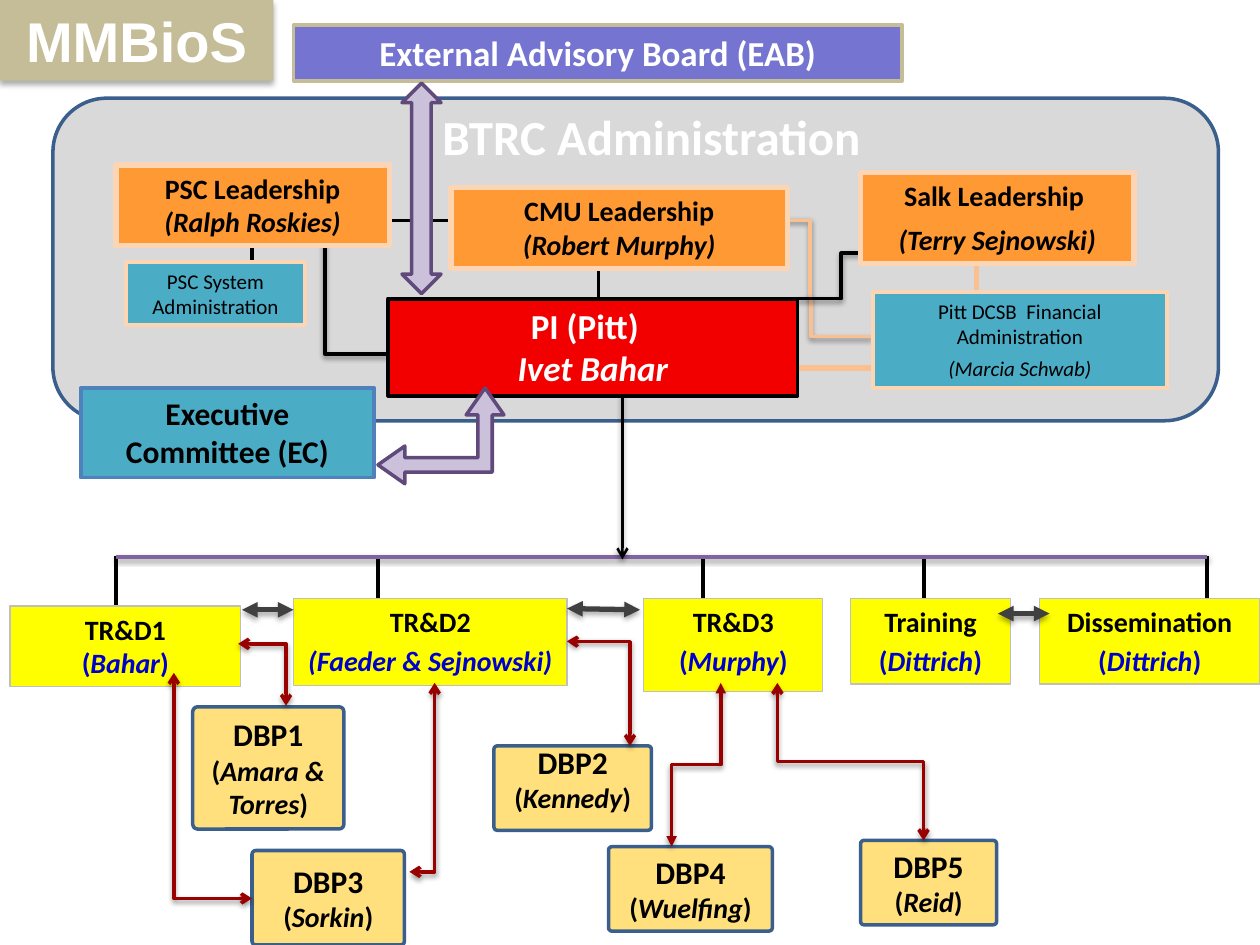
"""Build the organisation chart of the MMBioS centre."""
from lxml import etree
from pptx import Presentation
from pptx.dml.color import RGBColor
from pptx.enum import shapes, text
from pptx.oxml import ns
from pptx.util import Inches, Pt

BLACK, WHITE = RGBColor(0, 0, 0), RGBColor(255, 255, 255)
GREY, CHARCOAL = RGBColor(0xD9, 0xD9, 0xD9), RGBColor(0x40, 0x40, 0x40)
SILVER, NAVY = RGBColor(0xBF, 0xBF, 0xBF), RGBColor(0x3A, 0x5F, 0x8C)
ORANGE, PEACH = RGBColor(0xFF, 0x99, 0x33), RGBColor(0xFC, 0xD5, 0xB5)
APRICOT, TEAL = RGBColor(0xFA, 0xC0, 0x90), RGBColor(0x4B, 0xAC, 0xC6)
BLUE, INK_BLUE = RGBColor(0x4F, 0x81, 0xBD), RGBColor(0, 0, 0xCC)
LILAC, PLUM = RGBColor(0xCC, 0xC1, 0xDA), RGBColor(0x60, 0x4A, 0x7B)
PURPLE, VIOLET = RGBColor(0x80, 0x64, 0xA2), RGBColor(0x75, 0x75, 0xD1)
YELLOW, GOLD = RGBColor(0xFF, 0xFF, 0), RGBColor(0xFF, 0xE0, 0x7D)
RED, DARK_RED = RGBColor(0xF2, 0, 0), RGBColor(0x99, 0, 0)
TAN = RGBColor(0xC4, 0xBD, 0x97)

LINE_SHADOW, ARROW_SHADOW, BADGE_SHADOW = (38, 3.1, 1.6), (35, 3.1, 1.8), (32, 3.5, 2.2)

STYLES = {
    "badge": dict(fill=TAN, sizes=[32], color=WHITE, font="Arial", shadow=BADGE_SHADOW),
    "board": dict(fill=VIOLET, line=TAN, sizes=[20], color=WHITE, before=[6]),
    "pi": dict(fill=RED, line=BLACK, sizes=[20, 20], color=WHITE),
    "leader": dict(fill=ORANGE, line=PEACH, width=3, sizes=[16, 16]),
    "office": dict(fill=TEAL, line=PEACH, sizes=[12, 12], bold=False, before=[6, 4]),
    "committee": dict(fill=TEAL, line=BLUE, sizes=[18], before=[6], after=[6]),
    "core": dict(fill=YELLOW, line=SILVER, width=0.75, sizes=[16, 16],
                 name_color=INK_BLUE, upright=True),
    "project": dict(fill=GOLD, line=NAVY, width=2, sizes=[18, 16], upright=True,
                    rounded=True),
}

BOXES = [
    ("office", (1, 2.08, 1.42, 0.5), ["PSC System Administration"], {}),
    ("office", (6.93, 2.32, 2.33, 0.76),
     ["Pitt DCSB  Financial Administration", "(Marcia Schwab)"], {}),
    ("leader", (6.83, 1.37, 2.17, 0.72), ["Salk Leadership ", "(Terry Sejnowski)"],
     dict(before=[6, 6])),
    ("leader", (3.58, 1.49, 2.67, 0.64), ["CMU Leadership", "(Robert Murphy)"], {}),
    ("leader", (0.92, 1.31, 2.17, 0.64), ["PSC Leadership", "(Ralph Roskies)"], {}),
    ("committee", (0.64, 3.08, 2.33, 0.71), ["Executive Committee (EC)"], {}),
    ("core", (0.08, 4.81, 1.83, 0.64), ["TR&D1", "(Bahar)"], {}),
    ("core", (2.33, 4.75, 2.17, 0.69), ["TR&D2", "(Faeder & Sejnowski)"],
     dict(after=[3, 0], upright=False)),
    ("core", (5.11, 4.75, 1.42, 0.74), ["TR&D3", "(Murphy)"], dict(after=[3, 3])),
    ("core", (6.75, 4.75, 1.27, 0.68), ["Training", "(Dittrich)"], dict(after=[3, 6])),
    ("core", (8.25, 4.75, 1.75, 0.68), ["Dissemination", "(Dittrich)"], dict(after=[3, 6])),
    ("project", (1.53, 5.61, 1.2, 0.97), ["DBP1", "(Amara & Torres)"], {}),
    ("project", (2, 6.75, 1.21, 0.75), ["DBP3", "(Sorkin)"], {}),
    ("project", (3.92, 5.92, 1.25, 0.67), ["DBP2", "(Kennedy)"], dict(bottom=0.2)),
    ("project", (4.83, 6.72, 1.3, 0.67), ["DBP4", "(Wuelfing)"], {}),
    ("project", (6.83, 6.67, 1.08, 0.67), ["DBP5", "(Reid)"], {}),
    ("board", (2.33, 0.2, 4.83, 0.44), ["External Advisory Board (EAB)"], {}),
    ("pi", (3.08, 2.37, 3.25, 0.77), ["PI (Pitt)  ", "Ivet Bahar"], {}),
    ("badge", (0, 0, 2.17, 0.64), ["MMBioS"], {}),
]

ADMIN_LINES = [
    ((6.92, 2.92), (6.33, 2.92), APRICOT, 3),
    ((7.75, 1.69), (7.75, 2.36), APRICOT, 3),
    ((2, 1.86), (2, 2.44), BLACK, 2.25),
    ((4.75, 2.03), (4.75, 2.61), BLACK, 2.25),
    ((3.92, 1.75), (2.75, 1.75), BLACK, 2.25),
]
ADMIN_ELBOWS = [
    ((6.43, 2.36), (6.18, 1.75), "down", None, APRICOT, 2.25),
    ((3.08, 2.81), (2.58, 1.92), "down", 0.003, BLACK, 2.25),
    ((6.42, 2.36), (6.92, 2.67), "across", 0.034, APRICOT, 2),
    ((6.83, 2.01), (6.33, 2.37), "across", 0.305, BLACK, 2.25),
]
BRANCHES = [0.92, 3, 5.58, 7.33, 9.58]
CORE_ARROWS = [((2.33, 4.84), (1.92, 4.84)), ((5.08, 4.84), (4.5, 4.83)),
               ((8.33, 4.87), (7.92, 4.87))]
PROJECT_ELBOWS = [
    ((1.89, 5.11), (2.27, 5.6), "across", None, "arrow"),
    ((4.5, 5.09), (5, 5.92), "down", 0.004, "arrow"),
    ((6.17, 5.42), (7.33, 6.67), "down", 0.5, "arrow"),
    ((1.38, 5.34), (2, 7.13), "down", None, "arrow"),
    ((5.33, 6.72), (5.72, 5.42), "down", 0.5, "triangle"),
    ((3.25, 6.92), (3.45, 5.42), "across", None, "arrow"),
]


def add_node(parent, tag, **attributes):
    node = etree.SubElement(parent, ns.qn(tag))
    for name, value in attributes.items():
        node.set(name, str(value))
    return node


def add_shadow(effects, shadow):
    alpha, blur, distance = shadow
    outer = add_node(effects, "a:outerShdw", blurRad=int(Pt(blur)), dist=int(Pt(distance)),
                     dir=5400000, rotWithShape=0)
    color = add_node(outer, "a:srgbClr", val="000000")
    add_node(color, "a:alpha", val=alpha * 1000)


def add_line(slide, start, end, color, width, head=None, tail=None, shadow=None,
             kind=shapes.MSO_CONNECTOR.STRAIGHT):
    connector = slide.shapes.add_connector(kind, *map(Inches, start + end))
    connector.line.color.rgb = color
    connector.line.width = Pt(width)
    outline = connector.line._get_or_add_ln()
    for tag, arrow in (("a:headEnd", head), ("a:tailEnd", tail)):
        if arrow:
            add_node(outline, tag, type=arrow)
    effects = add_node(connector._element.spPr, "a:effectLst")
    if shadow:
        add_shadow(effects, shadow)
    return connector


def add_elbow(slide, start, end, first, bend, color, width, arrow=None):
    (x1, y1), (x2, y2) = start, end
    if first == "down":
        x, y, dx, dy = (x1 + x2) / 2, (y1 + y2) / 2, x2 - x1, y2 - y1
        start, end = (x - dy / 2, y + dx / 2), (x + dy / 2, y - dx / 2)
    connector = add_line(slide, start, end, color, width, arrow, arrow, LINE_SHADOW,
                         shapes.MSO_CONNECTOR.ELBOW)
    properties = connector._element.spPr
    if first == "down":
        properties.find(ns.qn("a:xfrm")).set("rot", "5400000")
    geometry = properties.find(ns.qn("a:prstGeom"))
    if bend is None:
        geometry.set("prst", "bentConnector2")
    else:
        guides = geometry.find(ns.qn("a:avLst"))
        add_node(guides, "a:gd", name="adj1", fmla=f"val {round(bend * 100000)}")


def add_block(slide, preset, at, fill, line=None, width=2.25, adjustments=(), shadow=None):
    shape = slide.shapes.add_shape(preset, *map(Inches, at))
    shape.shadow.inherit = False
    shape.fill.solid()
    shape.fill.fore_color.rgb = fill
    if line is None:
        shape.line.fill.background()
    else:
        shape.line.color.rgb = line
        shape.line.width = Pt(width)
    for index, value in enumerate(adjustments):
        shape.adjustments[index] = value
    if shadow:
        add_shadow(shape._element.spPr.find(ns.qn("a:effectLst")), shadow)
    return shape


def write_lines(frame, lines, sizes, color=BLACK, name_color=None, font="Calibri", bold=True,
                upright=False, before=(0, 0), after=(0, 0)):
    frame.word_wrap = True
    for index, line in enumerate(lines):
        paragraph = frame.add_paragraph() if index else frame.paragraphs[0]
        paragraph.alignment = text.PP_ALIGN.CENTER
        paragraph.space_before, paragraph.space_after = Pt(before[index]), Pt(after[index])
        pieces = ["(", line[1:-1], ")"] if index and upright else [line]
        for piece in pieces:
            run = paragraph.add_run()
            run.text = piece
            run.font.name, run.font.size, run.font.bold = font, Pt(sizes[index]), bold
            run.font.italic = bool(index) and piece not in "()"
            run.font.color.rgb = name_color if index and name_color else color


def add_box(slide, at, lines, fill, line=None, width=2.25, rounded=False, shadow=None,
            bottom=0.05, **writing):
    preset = shapes.MSO_SHAPE.ROUNDED_RECTANGLE if rounded else shapes.MSO_SHAPE.RECTANGLE
    shape = add_block(slide, preset, at, fill, line, width, [0.039] if rounded else [], shadow)
    frame = shape.text_frame
    frame.margin_bottom = Inches(bottom)
    frame.vertical_anchor = text.MSO_ANCHOR.MIDDLE if rounded else text.MSO_ANCHOR.TOP
    if not rounded:
        frame.auto_size = text.MSO_AUTO_SIZE.SHAPE_TO_FIT_TEXT
    write_lines(frame, lines, **writing)


def main():
    presentation = Presentation()
    presentation.slide_width, presentation.slide_height = Inches(10), Inches(7.5)
    slide = presentation.slides.add_slide(presentation.slide_layouts[6])
    preset = shapes.MSO_SHAPE
    add_block(slide, preset.ROUNDED_RECTANGLE, (0.42, 0.78, 9.25, 2.56), GREY, NAVY, 2)
    title = slide.shapes.add_textbox(*map(Inches, (2.67, 0.8, 5, 0.57)))
    write_lines(title.text_frame, ["BTRC Administration"], [28], WHITE)
    for line in ADMIN_LINES:
        add_line(slide, *line)
    for elbow in ADMIN_ELBOWS:
        add_elbow(slide, *elbow)
    for x in BRANCHES:
        add_line(slide, (x, 4.41), (x, 4.91), BLACK, 2.25)
    add_line(slide, (BRANCHES[0], 4.42), (BRANCHES[-1], 4.42), PURPLE, 2, shadow=LINE_SHADOW)
    add_line(slide, (4.94, 2.61), (4.94, 4.44), BLACK, 1.5, tail="arrow", shadow=LINE_SHADOW)
    for style, at, lines, changes in BOXES:
        add_box(slide, at, lines, **{**STYLES[style], **changes})
    board_arrow = add_block(slide, preset.LEFT_RIGHT_ARROW, (2.51, 1.34, 1.67, 0.31),
                            LILAC, PLUM, 2)
    board_arrow.rotation = 270
    add_block(slide, preset.LEFT_UP_ARROW, (3, 3.08, 1, 0.76), LILAC, PLUM, 2,
              (0.15, 0.197, 0.281))
    for start, end in CORE_ARROWS:
        add_line(slide, start, end, CHARCOAL, 3, "triangle", "triangle", ARROW_SHADOW)
    for start, end, first, bend, arrow in PROJECT_ELBOWS:
        add_elbow(slide, start, end, first, bend, DARK_RED, 2, arrow)
    presentation.save("out.pptx")


if __name__ == "__main__":
    main()
